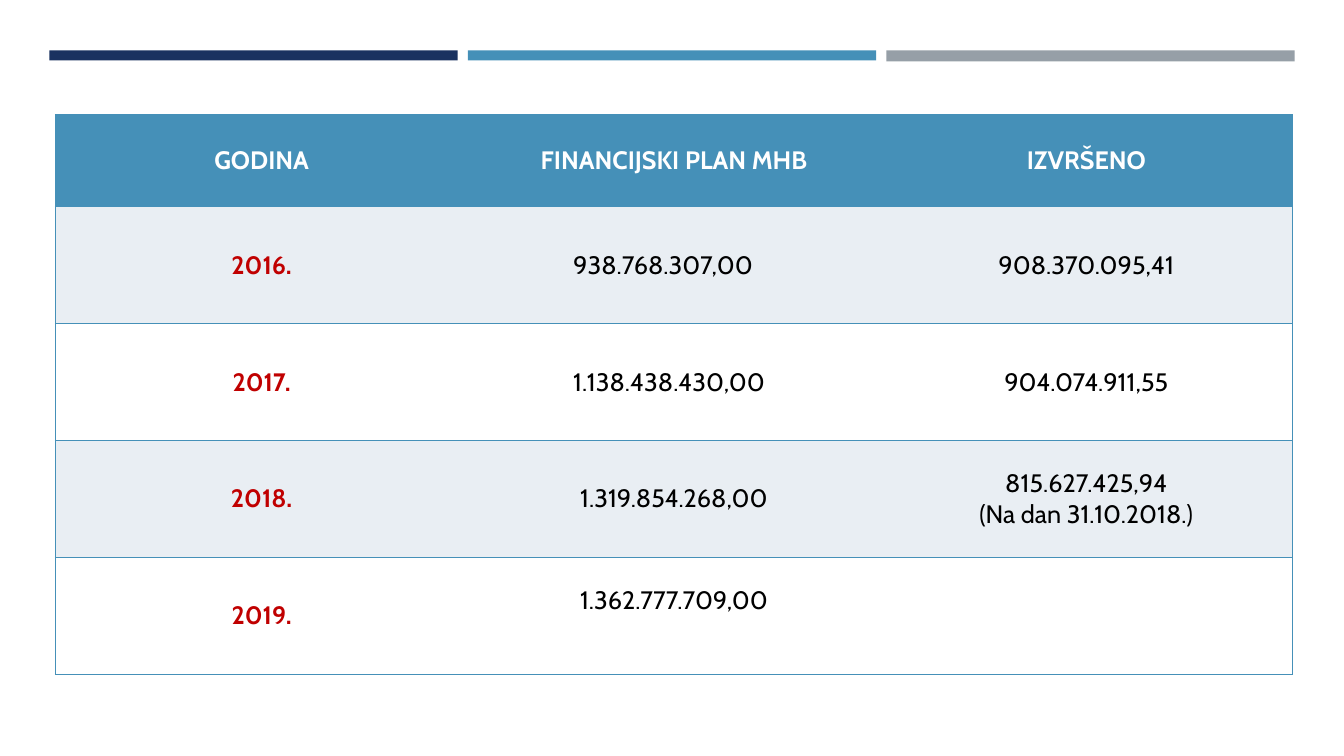
from lxml import etree
from pptx import Presentation
from pptx import util as u
from pptx.dml.color import RGBColor
from pptx.enum import shapes, text
from pptx.oxml import ns

NAVY = RGBColor(0x1A, 0x32, 0x60)
BLUE = RGBColor(0x45, 0x90, 0xB8)
GREY = RGBColor(0x96, 0x9F, 0xA7)
PALE = RGBColor(0xE9, 0xEE, 0xF3)
WHITE = RGBColor(0xFF, 0xFF, 0xFF)
RED = RGBColor(0xC0, 0x00, 0x00)
BLACK = RGBColor(0x00, 0x00, 0x00)

HEADER = {"name": "Cabin", "size": u.Pt(18), "bold": True}
YEAR = HEADER
AMOUNT = {"name": "Cabin", "size": u.Pt(18), "bold": False}

# A trailing tab nudges the first two plan amounts to the left
BUDGET = [
    ["GODINA", "FINANCIJSKI PLAN MHB", "IZVRŠENO"],
    ["2016.", "938.768.307,00\t", "908.370.095,41"],
    ["2017.", "1.138.438.430,00\t", "904.074.911,55"],
    ["2018.", "1.319.854.268,00", "815.627.425,94\n(Na dan 31.10.2018.)"],
    ["2019.", "1.362.777.709,00", ""],
]


def add_bar(page, left, height, color):
    bar = page.shapes.add_shape(shapes.MSO_SHAPE.RECTANGLE, u.Inches(left),
                                u.Inches(0.5), u.Inches(4.05), u.Inches(height))
    bar.shadow.inherit = False
    bar.fill.solid()
    bar.fill.fore_color.rgb = color
    bar.line.fill.background()


def set_borders(cell, sides):
    """Draw the named sides in blue and leave the others without a line."""
    properties = cell._tc.get_or_add_tcPr()
    for side in "LRTB":
        line = etree.SubElement(properties, ns.qn(f"a:ln{side}"), w=str(u.Pt(1)))
        if side in sides:
            fill = etree.SubElement(line, ns.qn("a:solidFill"))
            etree.SubElement(fill, ns.qn("a:srgbClr"), val=str(BLUE))
        else:
            etree.SubElement(line, ns.qn("a:noFill"))


def fill_cell(cell, words, background, style, color):
    cell.fill.solid()
    cell.fill.fore_color.rgb = background
    cell.vertical_anchor = text.MSO_ANCHOR.MIDDLE
    if not words:
        return
    frame = cell.text_frame
    for index, line in enumerate(words.split("\n")):
        para = frame.add_paragraph() if index else frame.paragraphs[0]
        para.alignment = text.PP_ALIGN.CENTER
        span = para.add_run()
        span.text = line
        for name, value in style.items():
            setattr(span.font, name, value)
        span.font.color.rgb = color


def add_budget_table(page):
    table = page.shapes.add_table(len(BUDGET), 3, u.Inches(0.55), u.Inches(1.14),
                                  u.Inches(12.27), u.Inches(5.55)).table
    table.first_row = table.horz_banding = False
    for column in table.columns:
        column.width = u.Inches(4.09)
    for r, values in enumerate(BUDGET):
        table.rows[r].height = u.Inches(1.16 if r else 0.91)
        background = (PALE if r % 2 else WHITE) if r else BLUE
        for c, words in enumerate(values):
            if r == 0:
                style, color = HEADER, WHITE
            elif c == 0:
                style, color = YEAR, RED
            else:
                style, color = AMOUNT, BLACK
            cell = table.cell(r, c)
            set_borders(cell, "TB" + {0: "L", 2: "R"}.get(c, ""))
            fill_cell(cell, words, background, style, color)
    # The last plan amount sits above the middle of its row
    table.cell(4, 1).margin_bottom = u.Inches(0.35)


def main():
    deck = Presentation()
    deck.slide_width, deck.slide_height = u.Inches(13.33), u.Inches(7.5)
    page = deck.slides.add_slide(deck.slide_layouts[6])

    # Colour bars along the top
    for index, (color, height) in enumerate([(NAVY, 0.1), (BLUE, 0.1), (GREY, 0.11)]):
        add_bar(page, 0.49 + 4.15 * index, height, color)

    # Yearly plan and spending
    add_budget_table(page)
    deck.save("out.pptx")


if __name__ == "__main__":
    main()
